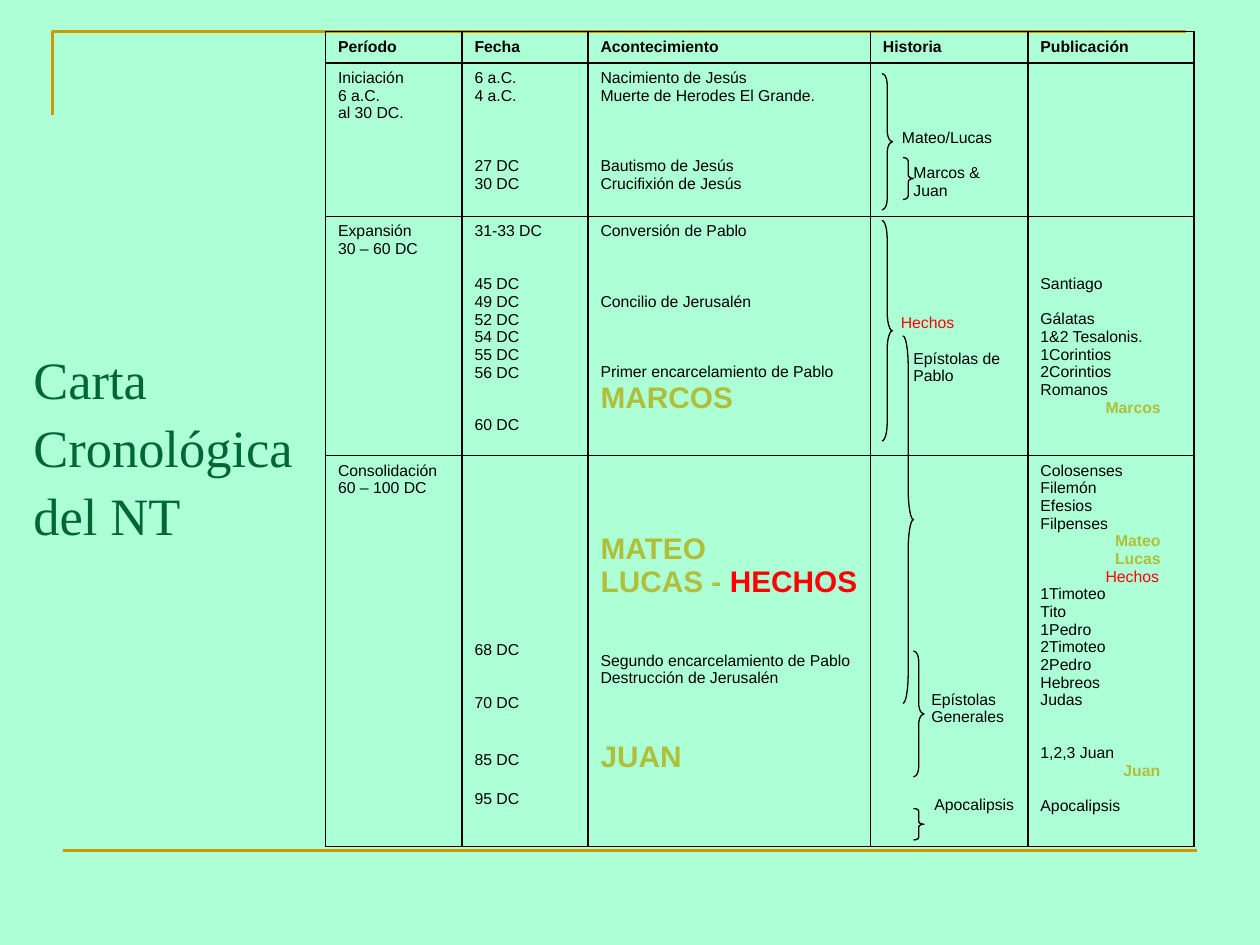
from dataclasses import dataclass
from lxml import etree
from pptx import Presentation
from pptx import util as u
from pptx.dml.color import RGBColor
from pptx.enum import shapes
from pptx.oxml import ns

MINT = RGBColor(0xAD, 0xFF, 0xD6)
GOLD = RGBColor(0xCC, 0x99, 0x00)
GREEN = RGBColor(0x00, 0x66, 0x33)
OLIVE = RGBColor(0xAF, 0xBF, 0x39)
RED = RGBColor(0xFF, 0x00, 0x00)
BLACK = RGBColor(0x00, 0x00, 0x00)

UNIT = u.Inches(1 / 12)  # the slide is a grid of 120 columns by 90 rows
LEAD = 10.06             # height of one text line, in points
COLS = 13, 12, 26.9, 15, 15.8
ROWS = 3, 14.6, 22.8, 37.2


def grid(n: float) -> u.Emu:
    return u.Emu(round(n * UNIT))


@dataclass
class Line:
    text: str
    gap: float = 0     # free text lines above
    dent: float = 0    # indent in grid columns
    size: int = 9
    bold: bool = False
    ink: RGBColor = BLACK
    tail: str = ""     # red ending of the line


@dataclass
class Brace:
    col: int
    row: int
    high: int


def gospel(text: str, gap: float = 0) -> Line:
    return Line(text, gap, size=17, bold=True, ink=OLIVE)


def book(text: str, dent: float) -> Line:
    return Line(text, dent=dent, bold=True, ink=OLIVE)


HEAD = [[Line(t, bold=True)] for t in
        ("Período", "Fecha", "Acontecimiento", "Historia", "Publicación")]

START = [
    ["Iniciación", "6 a.C.", "al 30 DC."],
    ["6 a.C.", "4 a.C.", Line("27 DC", 3), "30 DC"],
    ["Nacimiento de Jesús", "Muerte de Herodes El Grande.",
     Line("Bautismo de Jesús", 3), "Crucifixión de Jesús"],
    [Line("Mateo/Lucas", 3.4, 1.8), Line("Marcos &", 1, 2.9),
     Line("Juan", dent=2.9)],
    [],
]

GROWTH = [
    ["Expansión", "30 – 60 DC"],
    ["31-33 DC", Line("45 DC", 2), "49 DC", "52 DC", "54 DC", "55 DC",
     "56 DC", Line("60 DC", 2)],
    ["Conversión de Pablo", Line("Concilio de Jerusalén", 3),
     Line("Primer encarcelamiento de Pablo", 3), gospel("MARCOS")],
    [Line("Hechos", 5.22, 1.7, ink=RED), Line("Epístolas de", 1, 2.9),
     Line("Pablo", dent=2.9)],
    [Line("Santiago", 3), Line("Gálatas", 1), "1&2 Tesalonis.",
     "1Corintios", "2Corintios", "Romanos", book("Marcos", 6.2)],
]

CLOSE = [
    ["Consolidación", "60 – 100 DC"],
    [Line("68 DC", 10.2), Line("70 DC", 2), Line("85 DC", 2.22),
     Line("95 DC", 1.22)],
    [gospel("MATEO", 4),
     Line("LUCAS - ", size=17, bold=True, ink=OLIVE, tail="HECHOS"),
     Line("Segundo encarcelamiento de Pablo", 3),
     "Destrucción de Jerusalén", gospel("JUAN", 3)],
    [Line("Epístolas", 13, 4.6), Line("Generales", dent=4.6),
     Line("Apocalipsis", 4, 4.9)],
    ["Colosenses", "Filemón", "Efesios", "Filpenses",
     book("Mateo", 7.1), book("Lucas", 7.1),
     Line("Hechos", dent=6.2, ink=RED), "1Timoteo", "Tito", "1Pedro",
     "2Timoteo", "2Pedro", "Hebreos", "Judas", Line("1,2,3 Juan", 2),
     book("Juan", 7.9), Line("Apocalipsis", 1)],
]

BRACES = [Brace(84, 7, 13), Brace(86, 15, 4), Brace(84, 21, 21),
          Brace(86, 32, 35), Brace(87, 62, 12), Brace(87, 77, 3)]


def style(run, size: float, ink: RGBColor, bold: bool = False,
          face: str = "Arial") -> None:
    font = run.font
    font.size, font.bold, font.name = u.Pt(size), bold, face
    font.color.rgb = ink


def border(cell) -> None:
    props = cell._tc.get_or_add_tcPr()
    for i, side in enumerate(("lnL", "lnR", "lnT", "lnB")):
        edge = etree.Element(ns.qn("a:" + side), w=str(u.Pt(1)))
        fill = etree.SubElement(edge, ns.qn("a:solidFill"))
        etree.SubElement(fill, ns.qn("a:srgbClr"), val=str(BLACK))
        props.insert(i, edge)


def fill_cell(cell, items: list) -> None:
    lines = [Line(i) if isinstance(i, str) else i for i in items]
    cell.fill.background()
    border(cell)
    cell.margin_left, cell.margin_right = u.Inches(0.1), u.Inches(0.05)
    cell.margin_top = cell.margin_bottom = u.Inches(0.05)
    if not lines:
        return
    # Space above the first line belongs to the cell margin
    cell.margin_top += u.Pt(lines[0].gap * LEAD)
    cell.text_frame.text = "\n".join(l.text for l in lines)
    for i, (para, line) in enumerate(zip(cell.text_frame.paragraphs, lines)):
        para.space_before = u.Pt(line.gap * LEAD if i else 0)
        para._p.get_or_add_pPr().set("marL", str(grid(line.dent)))
        style(para.runs[0], line.size, line.ink, line.bold)
        if line.tail:
            run = para.add_run()
            run.text = line.tail
            style(run, line.size, RED, line.bold)


def add_chart_table(slide) -> None:
    table = slide.shapes.add_table(
        len(ROWS), len(COLS), grid(31), grid(3),
        grid(sum(COLS)), grid(sum(ROWS))).table
    table.first_row = table.horz_banding = False
    for col, wide in zip(table.columns, COLS):
        col.width = grid(wide)
    for row, high, cells in zip(table.rows, ROWS, (HEAD, START, GROWTH, CLOSE)):
        row.height = grid(high)
        for cell, items in zip(row.cells, cells):
            fill_cell(cell, items)


def add_frame(slide) -> None:
    pen = slide.shapes.build_freeform(grid(5), grid(11))
    pen.add_line_segments([(grid(5), grid(3)), (grid(113), grid(3))],
                          close=False)
    angle = pen.convert_to_shape()
    angle.shadow.inherit = False
    angle.fill.background()
    base = slide.shapes.add_connector(
        shapes.MSO_CONNECTOR.STRAIGHT, grid(6), grid(81), grid(114), grid(81))
    etree.SubElement(base._element.spPr, ns.qn("a:effectLst"))
    for item in (angle, base):
        item.line.color.rgb = GOLD
        item.line.width = u.Pt(1.5)


def add_title(slide) -> None:
    frame = slide.shapes.add_textbox(
        grid(2), grid(32), grid(37), grid(15)).text_frame
    frame.word_wrap = True
    frame.text = "Carta\vCronológica\vdel NT"
    para = frame.paragraphs[0]
    para.line_spacing = 1.08
    for run in para.runs:
        style(run, 30, GREEN, face="Times New Roman")


def add_brace(slide, brace: Brace) -> None:
    shape = slide.shapes.add_shape(
        shapes.MSO_SHAPE.RIGHT_BRACE, grid(brace.col), grid(brace.row),
        grid(1), grid(brace.high))
    shape.adjustments[0] = brace.high / 12
    shape.shadow.inherit = False
    shape.fill.background()
    shape.line.color.rgb = BLACK
    shape.line.width = u.Pt(0.75)


def main() -> None:
    deck = Presentation()
    deck.slide_width, deck.slide_height = grid(120), grid(90)
    slide = deck.slides.add_slide(deck.slide_layouts[6])
    slide.background.fill.solid()
    slide.background.fill.fore_color.rgb = MINT
    add_frame(slide)
    add_chart_table(slide)
    add_title(slide)
    for brace in BRACES:
        add_brace(slide, brace)
    deck.save("out.pptx")


if __name__ == "__main__":
    main()
